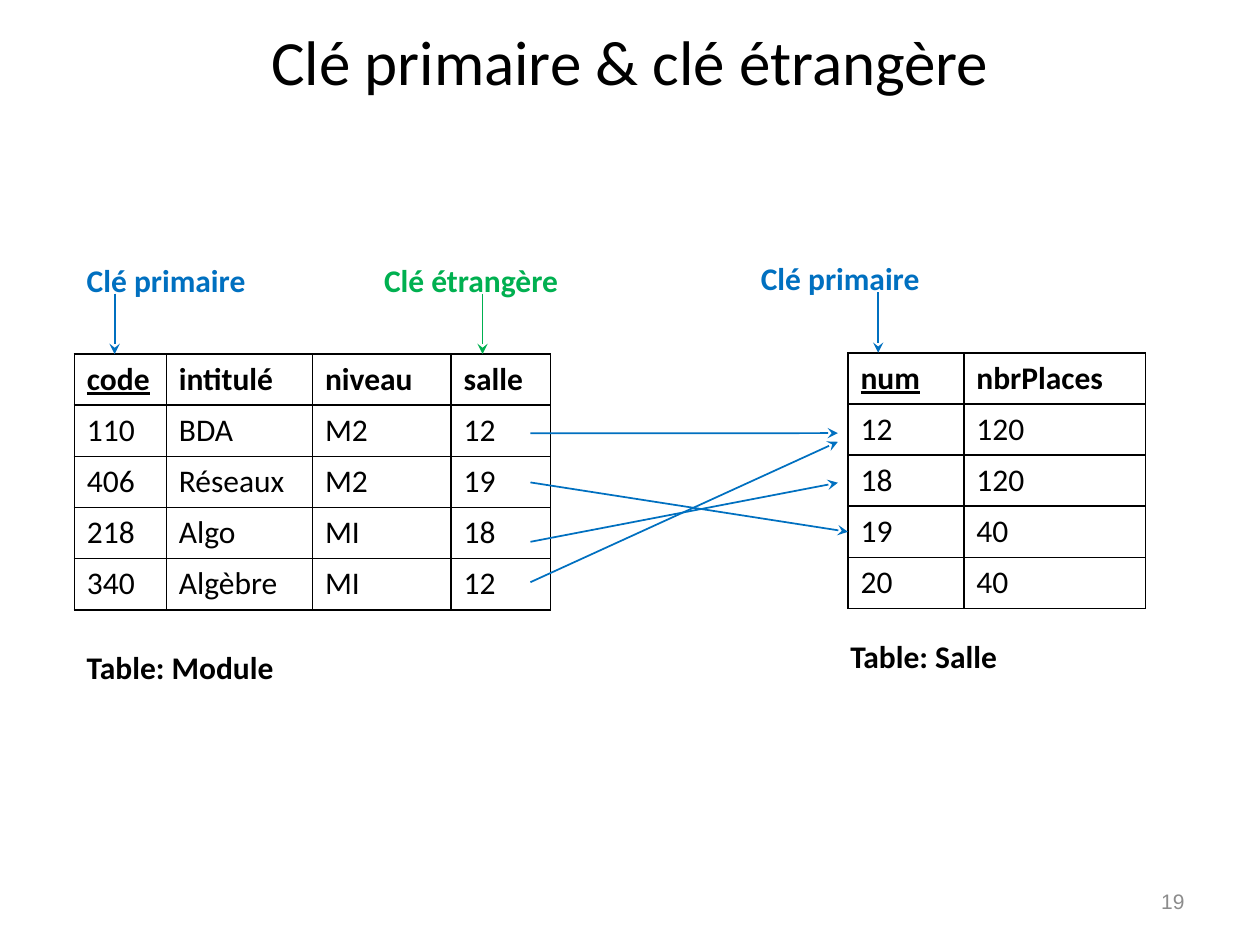
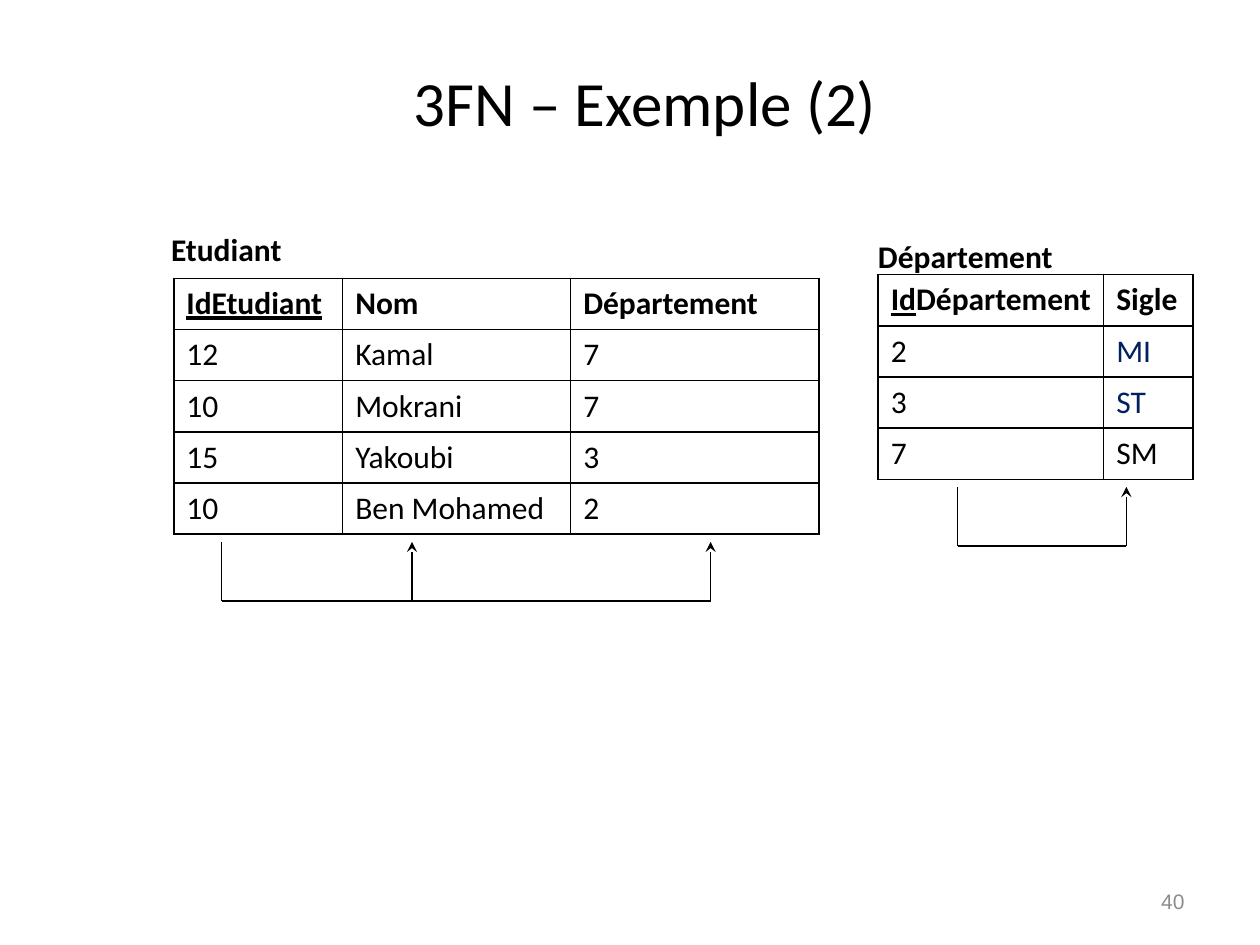
from lxml import etree
from pptx import Presentation
from pptx import util as u
from pptx.dml.color import RGBColor
from pptx.enum import shapes, text
from pptx.oxml import ns

BLACK, WHITE, GREY = "000000", "FFFFFF", "8C8C8C"
BLUE, GREEN, NAVY = "0070C0", "00B050", "002060"
ROW = 0.406  # height of a table row, inches
KEY_GAP = 0.48  # length of the arrow above a key column
BODY_SIZE = 18


def rgb(code):
    return RGBColor.from_string(code)


def style(font, size=BODY_SIZE, color=BLACK, bold=False, face="Calibri"):
    font.name, font.size, font.bold = face, u.Pt(size), bold
    font.color.rgb = rgb(color)


def write(slide, box, words, align=text.PP_ALIGN.LEFT, anchor=text.MSO_ANCHOR.TOP, **font):
    frame = slide.shapes.add_textbox(*map(u.Inches, box)).text_frame
    frame.word_wrap = True
    frame.vertical_anchor = anchor
    paragraph = frame.paragraphs[0]
    paragraph.text, paragraph.alignment = words, align
    style(paragraph.font, **font)


def line(slide, start, end, color=BLACK, width=0.75, arrow=False):
    link = slide.shapes.add_connector(
        shapes.MSO_CONNECTOR.STRAIGHT, *map(u.Inches, (*start, *end)))
    link.line.color.rgb = rgb(color)
    link.line.width = u.Pt(width)
    if arrow:
        etree.SubElement(link.line._get_or_add_ln(), ns.qn("a:tailEnd"), type="stealth")
    etree.SubElement(link._element.spPr, ns.qn("a:effectLst"))


def outline(cell):
    """Black rule on the four sides; borders come before the fill."""
    props = cell._tc.get_or_add_tcPr()
    for place, side in enumerate("LRTB"):
        border = etree.Element(ns.qn(f"a:ln{side}"), w=str(u.Pt(1)))
        fill = etree.SubElement(border, ns.qn("a:solidFill"))
        etree.SubElement(fill, ns.qn("a:srgbClr"), val=BLACK)
        props.insert(place, border)


def relation(slide, origin, widths, key, rows, tints=None):
    """Table whose first heading starts with the underlined key."""
    size = (sum(widths), ROW * len(rows))
    grid = slide.shapes.add_table(
        len(rows), len(widths), *map(u.Inches, (*origin, *size))).table
    grid.first_row = grid.horz_banding = False
    for column, width in zip(grid.columns, widths):
        column.width = u.Inches(width)
    for r, row in enumerate(rows):
        grid.rows[r].height = u.Inches(ROW)
        for c, value in enumerate(row):
            cell = grid.cell(r, c)
            cell.fill.solid()
            cell.fill.fore_color.rgb = rgb(WHITE)
            outline(cell)
            paragraph = cell.text_frame.paragraphs[0]
            if r == c == 0:
                key_run = paragraph.add_run()
                key_run.text, key_run.font.underline = key, True
                value = value.removeprefix(key)
            if value:
                paragraph.add_run().text = value
            color = (tints or {}).get(value, BLACK)
            style(paragraph.font, color=color, bold=r == 0)
            for run in paragraph.runs:
                style(run.font, color=color, bold=r == 0)


def caption(slide, origin, offset, words, color=BLACK):
    """Bold label placed from the corner of its table."""
    x, y = (a + b for a, b in zip(origin, offset))
    write(slide, (x, y, 1.97, 0.4), words, color=color, bold=True)


def key_label(slide, origin, label_dx, arrow_dx, words, color):
    """Label above a table with an arrow down to the key column."""
    x, y = origin
    caption(slide, origin, (label_dx, -0.79), words, color)
    line(slide, (x + arrow_dx, y - KEY_GAP), (x + arrow_dx, y), color, 1, True)


def dependency(slide, origin, row_count, source, targets):
    """Bracket under a table, from the key to the columns it determines."""
    x, y = origin
    top = y + row_count * ROW + 0.06
    base = top + 0.47
    line(slide, (x + source, base), (x + targets[-1], base))
    line(slide, (x + source, base), (x + source, top))
    for target in targets:
        line(slide, (x + target, base), (x + target, top), arrow=True)


def new_slide(deck, title, title_box, number):
    slide = deck.slides.add_slide(deck.slide_layouts[6])
    middle = text.MSO_ANCHOR.MIDDLE
    write(slide, title_box, title, text.PP_ALIGN.CENTER, middle, size=36)
    write(slide, (7.17, 6.95, 2.33, 0.4), number, text.PP_ALIGN.RIGHT, middle,
          size=12, color=GREY, face="Arial")
    return slide


def keys_slide(deck):
    slide = new_slide(deck, "Clé primaire & clé étrangère", (0, -0.03, 10, 1.02), "19")
    module, salle = (0.59, 2.81), (6.73, 2.8)

    # Tables
    relation(slide, module, (0.73, 1.16, 1.1, 0.79), "code", [
        ("code", "intitulé", "niveau", "salle"),
        ("110", "BDA", "M2", "12"),
        ("406", "Réseaux", "M2", "19"),
        ("218", "Algo", "MI", "18"),
        ("340", "Algèbre", "MI", "12")])
    relation(slide, salle, (0.92, 1.44), "num", [
        ("num", "nbrPlaces"),
        ("12", "120"), ("18", "120"), ("19", "40"), ("20", "40")])
    caption(slide, module, (0, 2.28), "Table: Module")
    caption(slide, salle, (-0.08, 2.21), "Table: Salle")

    # Keys
    key_label(slide, module, 0, 0.32, "Clé primaire", BLUE)
    key_label(slide, module, 2.36, 3.24, "Clé étrangère", GREEN)
    key_label(slide, salle, -0.79, 0.24, "Clé primaire", BLUE)

    # Foreign key links: row in Module, row in Salle, gap before Salle
    for from_row, to_row, gap in ((1.55, 1.57, 0.08), (4.46, 1.74, 0.08),
                                  (2.51, 3.5, 0), (3.67, 2.54, 0.08)):
        line(slide, (module[0] + 3.62, module[1] + from_row * ROW),
             (salle[0] - gap, salle[1] + to_row * ROW), BLUE, 1, True)


def third_form_slide(deck):
    slide = new_slide(deck, "3FN – Exemple (2)", (0.59, 0.29, 9.06, 1.02), "40")
    etudiant, departement = (1.38, 2.21), (6.97, 2.18)

    # Students
    relation(slide, etudiant, (1.34, 1.81, 1.97), "IdEtudiant", [
        ("IdEtudiant", "Nom", "Département"),
        ("12", "Kamal", "7"),
        ("10", "Mokrani", "7"),
        ("15", "Yakoubi", "3"),
        ("10", "Ben Mohamed", "2")])
    caption(slide, etudiant, (-0.12, -0.43), "Etudiant")
    dependency(slide, etudiant, 5, 0.38, (1.89, 4.26))

    # Departments
    relation(slide, departement, (1.79, 0.71), "Id", [
        ("IdDépartement", "Sigle"),
        ("2", "MI"), ("3", "ST"), ("7", "SM")], {"MI": NAVY, "ST": NAVY})
    caption(slide, departement, (-0.1, -0.35), "Département")
    dependency(slide, departement, 4, 0.63, (1.97,))


def main():
    deck = Presentation()
    deck.slide_width, deck.slide_height = u.Inches(10), u.Inches(7.5)
    keys_slide(deck)
    third_form_slide(deck)
    deck.save("out.pptx")


if __name__ == "__main__":
    main()
